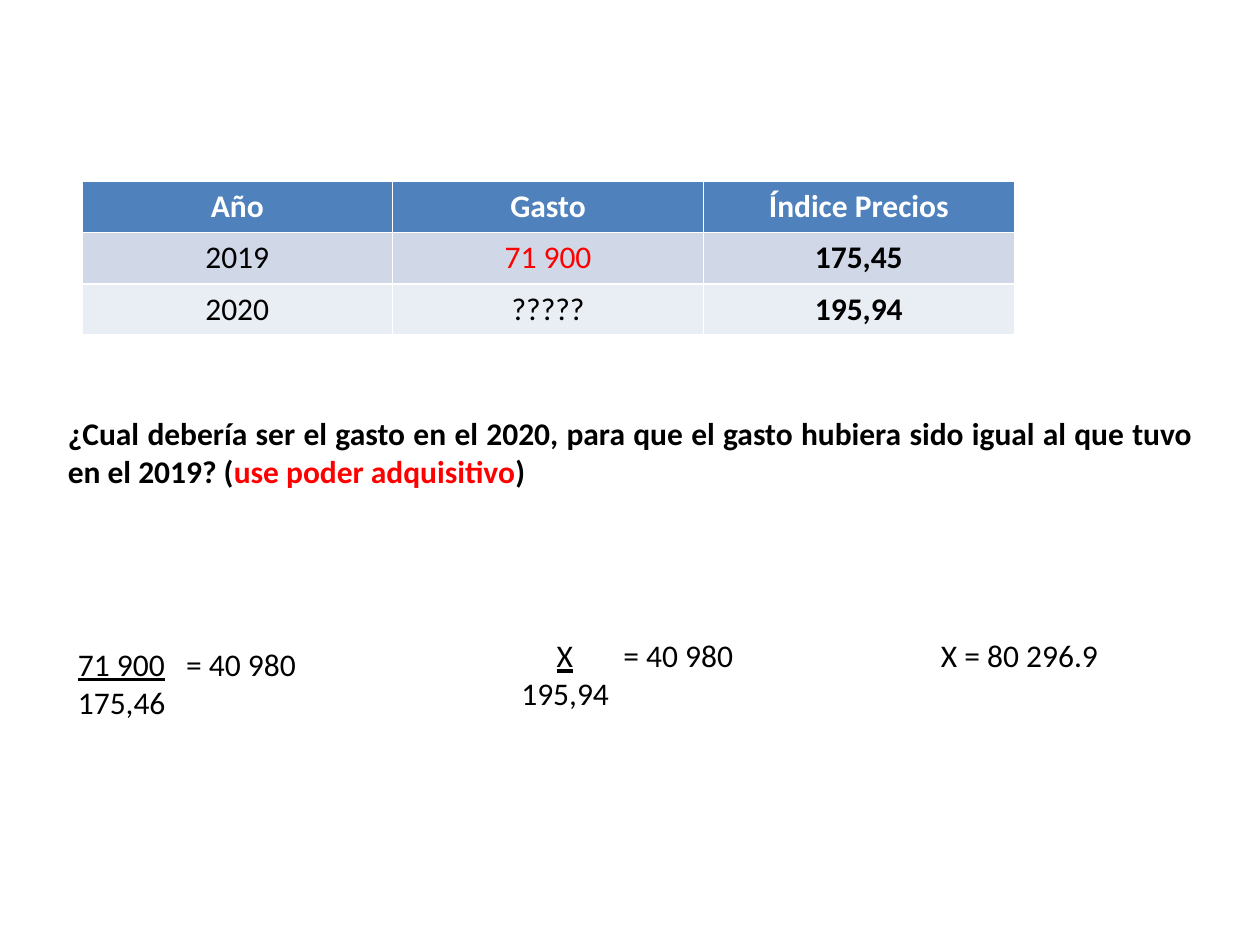
from lxml import etree
from pptx import Presentation
from pptx.dml.color import RGBColor
from pptx.enum.text import MSO_AUTO_SIZE, PP_ALIGN
from pptx.oxml.ns import qn
from pptx.util import Inches, Pt

GROW = MSO_AUTO_SIZE.SHAPE_TO_FIT_TEXT
LEFT, MID, FULL = PP_ALIGN.LEFT, PP_ALIGN.CENTER, PP_ALIGN.JUSTIFY
BLACK, RED, WHITE = "000000", "FF0000", "FFFFFF"
BASE = {"name": "Calibri", "size": Pt(18), "bold": False}


def paint(hue):
    return RGBColor.from_string(hue)


def add_run(para, text, hue=BLACK, **style):
    run = para.add_run()
    run.text = text
    for key, value in {**BASE, **style}.items():
        setattr(run.font, key, value)
    run.font.color.rgb = paint(hue)


def set_stops(para, stops):
    props = para._p.get_or_add_pPr()
    tabs = etree.SubElement(props, qn("a:tabLst"))
    for stop in stops:
        etree.SubElement(tabs, qn("a:tab"), pos=str(Inches(stop)), algn="l")


def add_text(slide, box, lines, align=LEFT):
    """Each line is (runs, tab stops, left indent); a run is (text, style)."""
    frame = slide.shapes.add_textbox(*map(Inches, box)).text_frame
    frame.word_wrap = True
    frame.auto_size = GROW
    for i, (runs, stops, indent) in enumerate(lines):
        para = frame.add_paragraph() if i else frame.paragraphs[0]
        para.alignment = align
        if indent:
            para._p.get_or_add_pPr().set("marL", str(Inches(indent)))
        if stops:
            set_stops(para, stops)
        for text, style in runs:
            add_run(para, text, **style)


def add_prices(slide, box):
    rows = [("Año", "Gasto", "Índice Precios"),
            ("2019", "71 900", "175,45"),
            ("2020", "?????", "195,94")]
    fills = ["4F81BD", "D0D8E8", "E9EDF4"]
    table = slide.shapes.add_table(3, 3, *map(Inches, box)).table
    for r, row in enumerate(rows):
        for c, text in enumerate(row):
            cell = table.cell(r, c)
            cell.fill.solid()
            cell.fill.fore_color.rgb = paint(fills[r])
            para = cell.text_frame.paragraphs[0]
            para.alignment = MID
            hue = WHITE if r == 0 else RED if text == "71 900" else BLACK
            add_run(para, text, hue, bold=r == 0 or c == 2)


def add_question(slide, box):
    bold = {"bold": True}
    runs = [("¿Cual debería ser el gasto en el 2020, para que el gasto "
             "hubiera sido igual al que tuvo en el 2019? (", bold),
            ("use poder adquisitivo", {"bold": True, "hue": RED}),
            (")", bold)]
    add_text(slide, box, [(runs, [], 0)], FULL)


def add_ratio(slide, box, top, below, stops, indent=0):
    # The underlined tabs draw the fraction bar
    runs = [(top, {"underline": True}), ("= 40 980", {})]
    add_text(slide, box, [(runs, stops, 0), ([(below, {})], [], indent)])


def main():
    deck = Presentation()
    deck.slide_width, deck.slide_height = Inches(10), Inches(7.5)
    slide = deck.slides.add_slide(deck.slide_layouts[6])

    # Data and question
    add_prices(slide, (0.65, 1.44, 7.4, 1.22))
    add_question(slide, (0.44, 3.24, 9.13, 0.71))

    # Solution steps
    add_ratio(slide, (0.52, 5.07, 3.7, 0.71), "71 900\t", "175,46", [0.86])
    add_ratio(slide, (3.93, 5, 3.7, 0.71), "\tX\t", "195,94", [0.39, 0.92], 0.11)
    add_text(slide, (7.37, 5, 2.2, 0.4), [([("X = 80 296.9", {})], [], 0)])

    deck.save("out.pptx")


if __name__ == "__main__":
    main()
